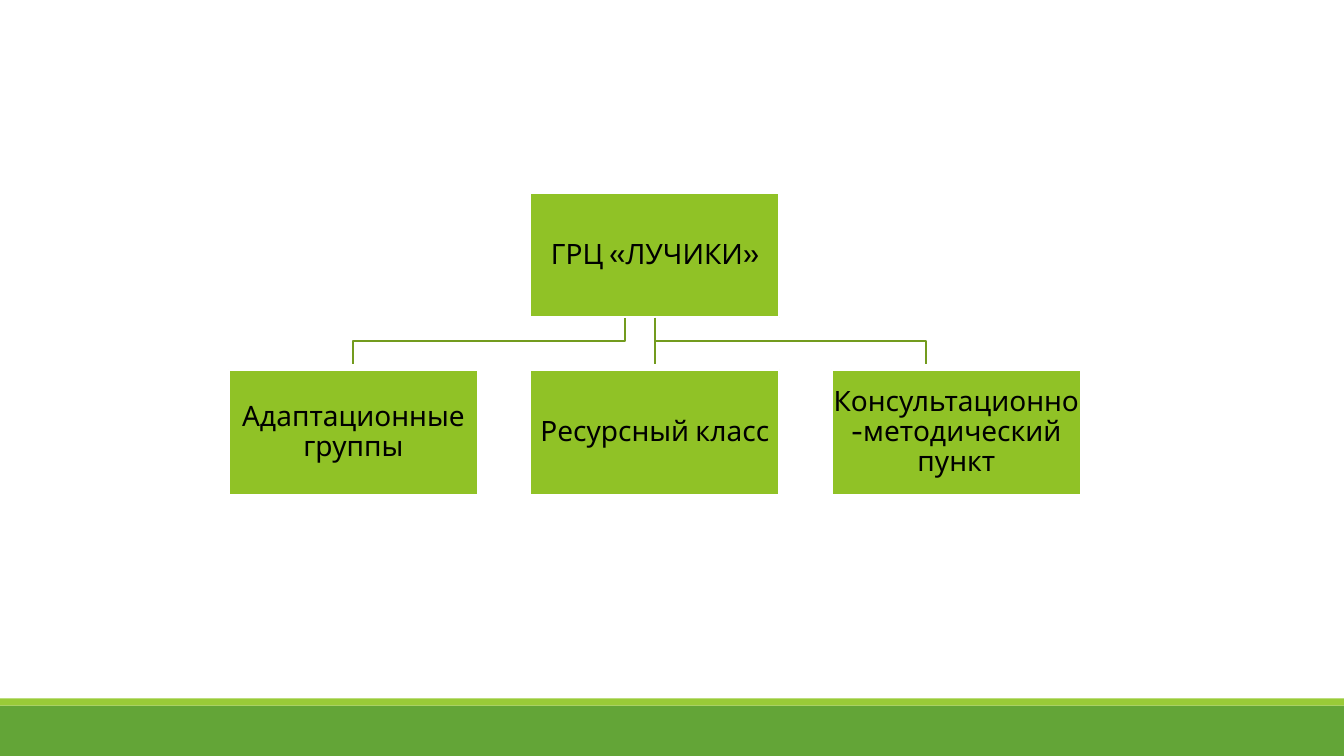
from lxml import etree
from pptx import Presentation
from pptx.dml.color import RGBColor
from pptx.enum.shapes import MSO_CONNECTOR, MSO_SHAPE
from pptx.enum.text import MSO_ANCHOR, PP_ALIGN
from pptx.oxml.ns import qn
from pptx.util import Inches, Pt

RECTANGLE = MSO_SHAPE.RECTANGLE
STRAIGHT = MSO_CONNECTOR.STRAIGHT
MIDDLE = MSO_ANCHOR.MIDDLE
CENTER = PP_ALIGN.CENTER
BOTTOM_SIDE = 2

SLIDE_WIDTH, SLIDE_HEIGHT = 13.33, 7.5
BOX_WIDTH, BOX_HEIGHT = 2.47, 1.24
ROOT_LEFT, ROOT_TOP = 5.26, 1.91
BRANCH_TOP, BRANCH_STEP = 3.67, 2.99
LINE_TOP, LINE_BEND, LINE_BOTTOM = 3.14, 3.38, 3.61
ELBOW_WIDTH = 2.69
BRANCHES = ["Адаптационные группы", "Ресурсный класс", "Консультационно-методический пункт"]


def color(value):
    return RGBColor.from_string(value)


class ChartSlide:
    """Holds the style and the slide of the organisation chart."""
    font = "Cabin"
    text_size = Pt(20)
    line_width = Pt(1.5)
    box_fill = "90C226"
    box_line = "FFFFFF"
    text_color = "000000"
    branch_line = "739B1E"

    def __init__(self, deck):
        self.page = deck.slides.add_slide(deck.slide_layouts[6])
        self.shapes = self.page.shapes

    def rectangle(self, left, top, width, height, fill):
        shape = self.shapes.add_shape(
            RECTANGLE, Inches(left), Inches(top), Inches(width), Inches(height))
        shape.shadow.inherit = False
        shape.fill.solid()
        shape.fill.fore_color.rgb = color(fill)
        shape.line.fill.background()
        return shape

    def style_line(self, line, value):
        line.color.rgb = color(value)
        line.width = self.line_width

    def box(self, left, top, text):
        box = self.rectangle(left, top, BOX_WIDTH, BOX_HEIGHT, self.box_fill)
        self.style_line(box.line, self.box_line)
        frame = box.text_frame
        frame.word_wrap = True
        frame.vertical_anchor = MIDDLE
        frame.margin_left = frame.margin_right = Inches(0.01)
        frame.margin_top = frame.margin_bottom = Inches(0.01)
        para = frame.paragraphs[0]
        para.text = text
        para.alignment = CENTER
        para.line_spacing = 0.9
        para.space_after = Pt(7)
        para.font.name = self.font
        para.font.size = self.text_size
        para.font.color.rgb = color(self.text_color)
        return box

    def elbow(self, start_x, end_x):
        """Draw a branch line that goes down, across and down again."""
        points = [(start_x, LINE_TOP), (start_x, LINE_BEND),
                  (end_x, LINE_BEND), (end_x, LINE_BOTTOM)]
        start, *rest = [(Inches(x), Inches(y)) for x, y in points]
        builder = self.shapes.build_freeform(*start)
        builder.add_line_segments(rest, close=False)
        branch = builder.convert_to_shape()
        branch.shadow.inherit = False
        branch.fill.background()
        self.style_line(branch.line, self.branch_line)

    def drop(self, box, x):
        """Draw a straight branch line down from the bottom of a box."""
        branch = self.shapes.add_connector(
            STRAIGHT, Inches(x), Inches(LINE_TOP), Inches(x), Inches(LINE_BOTTOM))
        branch.begin_connect(box, BOTTOM_SIDE)
        self.style_line(branch.line, self.branch_line)
        etree.SubElement(branch._element.spPr, qn("a:effectLst"))


def main():
    deck = Presentation()
    deck.slide_width = Inches(SLIDE_WIDTH)
    deck.slide_height = Inches(SLIDE_HEIGHT)
    slide = ChartSlide(deck)

    slide.rectangle(0, 7, SLIDE_WIDTH, 0.5, "63A537")
    slide.rectangle(0, 6.93, SLIDE_WIDTH, 0.07, "99CB38")

    center = ROOT_LEFT + BOX_WIDTH / 2
    left_start = center - BRANCH_STEP + ELBOW_WIDTH
    slide.elbow(center, center + ELBOW_WIDTH)
    slide.elbow(left_start, left_start - ELBOW_WIDTH)

    root = slide.box(ROOT_LEFT, ROOT_TOP, "ГРЦ «ЛУЧИКИ»")
    slide.drop(root, center)
    for position, text in enumerate(BRANCHES, start=-1):
        slide.box(ROOT_LEFT + position * BRANCH_STEP, BRANCH_TOP, text)

    deck.save("out.pptx")


if __name__ == "__main__":
    main()
